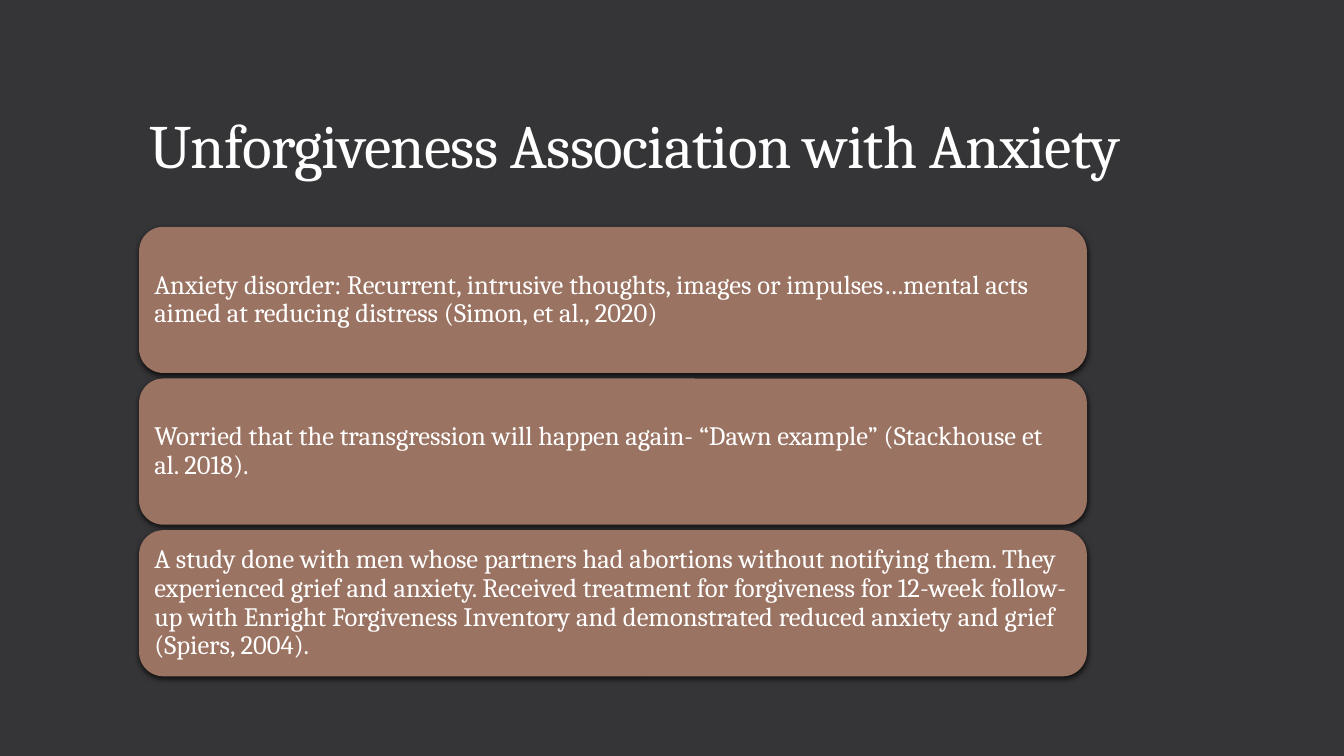
import pptx
import pptx.util
import pptx.dml.color
import pptx.enum.shapes
import pptx.enum.text
import pptx.oxml.ns
from lxml import etree
from pptx.util import Inches

TITLE = "Unforgiveness Association with Anxiety"
POINTS = [
    "Anxiety disorder: Recurrent, intrusive thoughts, images or impulses…mental acts "
    "aimed at reducing distress (Simon, et al., 2020)",
    "Worried that the transgression will happen again- “Dawn example” "
    "(Stackhouse et al. 2018).",
    "A study done with men whose partners had abortions without notifying them. "
    "They experienced grief and anxiety. Received treatment for forgiveness for "
    "12-week follow-up with Enright Forgiveness Inventory and demonstrated reduced "
    "anxiety and grief (Spiers, 2004).",
]
THEME = {
    "font": "Cambria", "title_size": 44, "point_size": 19,
    "background": "353537", "card": "9B7362", "text": "FFFFFF", "shadow": "000000",
}
LEFT = 1.38
CARD_TOP, CARD_W, CARD_H, CARD_STEP = 2.25, 9.4, 1.45, 1.505
CARD_INSET = 0.15


def color(name):
    return pptx.dml.color.RGBColor.from_string(THEME[name])


def set_text(s, text, size, anchor, inset_x, inset_y):
    tf = s.text_frame
    tf.word_wrap = True
    tf.vertical_anchor = anchor
    tf.margin_left = tf.margin_right = Inches(inset_x)
    tf.margin_top = tf.margin_bottom = Inches(inset_y)
    p = tf.paragraphs[0]
    p.text = text
    p.alignment = pptx.enum.text.PP_ALIGN.LEFT
    p.line_spacing = 0.9
    p.font.name = THEME["font"]
    p.font.size = pptx.util.Pt(THEME[size])
    p.font.color.rgb = color("text")
    return p


def add_soft_shadow(s):
    qn = pptx.oxml.ns.qn
    s.shadow.inherit = False
    effects = s.element.spPr.find(qn("a:effectLst"))
    shadow = etree.SubElement(
        effects, qn("a:outerShdw"), blurRad=str(pptx.util.Pt(4)),
        dist=str(pptx.util.Pt(1.2)), dir="5400000", rotWithShape="0")
    tint = etree.SubElement(shadow, qn("a:srgbClr"), val=THEME["shadow"])
    etree.SubElement(tint, qn("a:alpha"), val="75000")


def add_title(slide):
    s = slide.shapes.add_textbox(Inches(LEFT), Inches(0.4), Inches(10.6), Inches(1.45))
    p = set_text(s, TITLE, "title_size", pptx.enum.text.MSO_ANCHOR.BOTTOM, 0.1, 0.05)
    p.runs[0].font._element.set("spc", "-50")


def add_card(slide, top, text):
    s = slide.shapes.add_shape(
        pptx.enum.shapes.MSO_SHAPE.ROUNDED_RECTANGLE,
        Inches(LEFT), Inches(top), Inches(CARD_W), Inches(CARD_H))
    s.fill.solid()
    s.fill.fore_color.rgb = color("card")
    s.line.fill.background()
    add_soft_shadow(s)
    # The rounded corners already inset the text by part of the corner radius.
    corner = s.adjustments[0] * CARD_H * 0.29
    inset = CARD_INSET - corner
    set_text(s, text, "point_size", pptx.enum.text.MSO_ANCHOR.MIDDLE, inset, inset)


def main():
    prs = pptx.Presentation()
    prs.slide_width, prs.slide_height = Inches(13.33), Inches(7.5)
    slide = prs.slides.add_slide(prs.slide_layouts[6])
    slide.background.fill.solid()
    slide.background.fill.fore_color.rgb = color("background")
    add_title(slide)
    for i, text in enumerate(POINTS):
        add_card(slide, CARD_TOP + i * CARD_STEP, text)
    prs.save("out.pptx")


if __name__ == "__main__":
    main()
